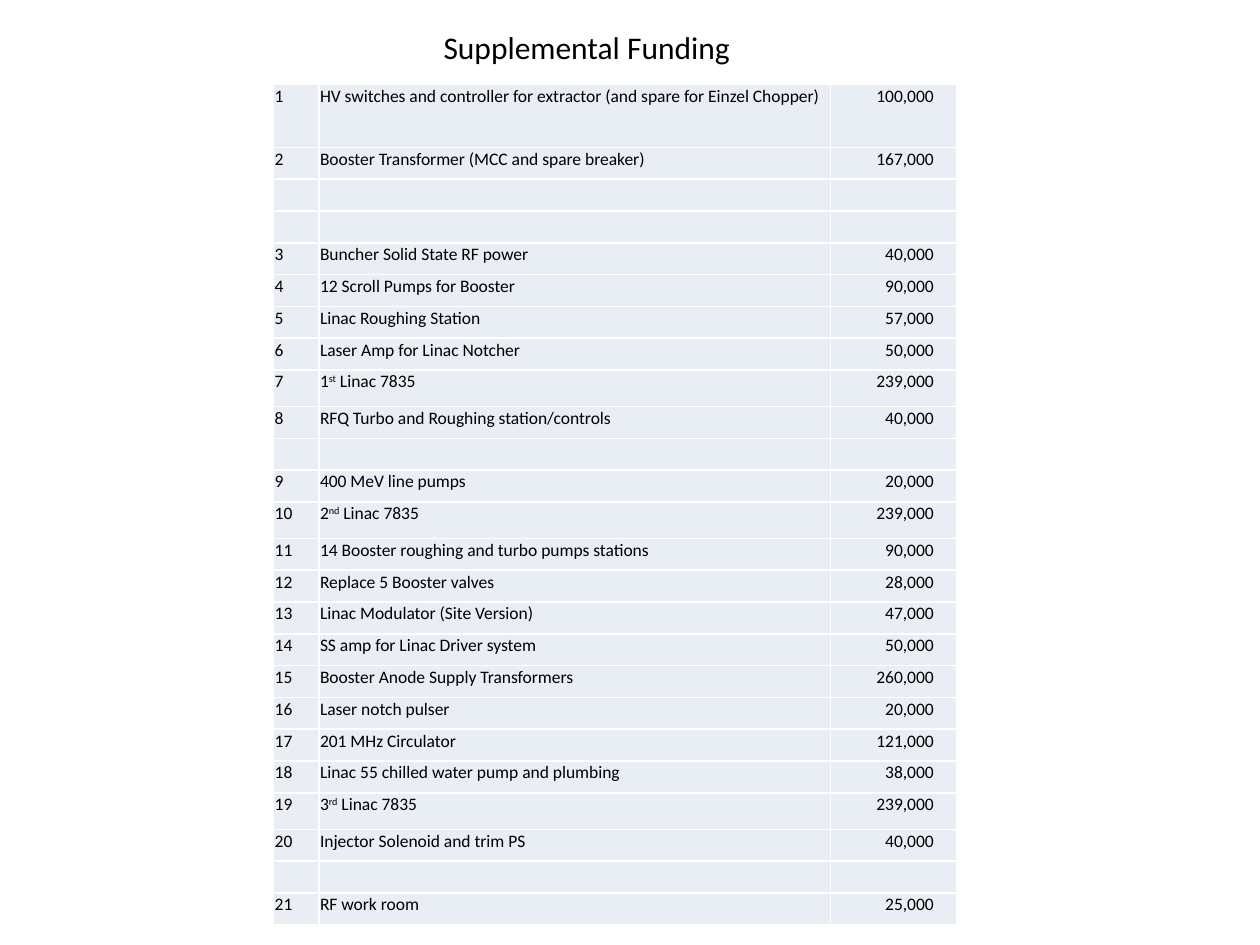
import itertools
from dataclasses import dataclass

import pptx
import pptx.dml.color
import pptx.enum.text
import pptx.util

Inches = pptx.util.Inches
ALIGN = pptx.enum.text.PP_ALIGN
ANCHOR = pptx.enum.text.MSO_ANCHOR


@dataclass
class Theme:
    font: str = "Calibri"
    ink: str = "000000"
    band: str = "E9EDF4"
    head: int = 18
    body: int = 10


ITEMS = [
    ("HV switches and controller for extractor (and spare for Einzel Chopper)", 100000),
    ("Booster Transformer (MCC and spare breaker)", 167000),
    None,
    None,
    ("Buncher Solid State RF power", 40000),
    ("12 Scroll Pumps for Booster", 90000),
    ("Linac Roughing Station", 57000),
    ("Laser Amp for Linac Notcher", 50000),
    ("1^st^ Linac 7835", 239000),
    ("RFQ Turbo and Roughing station/controls", 40000),
    None,
    ("400 MeV line pumps", 20000),
    ("2^nd^ Linac 7835", 239000),
    ("14 Booster roughing and turbo pumps stations", 90000),
    ("Replace 5 Booster valves", 28000),
    ("Linac Modulator (Site Version)", 47000),
    ("SS amp for Linac Driver system", 50000),
    ("Booster Anode Supply Transformers", 260000),
    ("Laser notch pulser", 20000),
    ("201 MHz Circulator", 121000),
    ("Linac 55 chilled water pump and plumbing", 38000),
    ("3^rd^ Linac 7835", 239000),
    ("Injector Solenoid and trim PS", 40000),
    None,
    ("RF work room", 25000),
]
WIDTHS = [0.36, 4.06, 1]
TOTAL = 6.67
FIRST = 0.5
RAISED = 0.29


def heights():
    tall = {0: FIRST}
    for i, item in enumerate(ITEMS):
        if item and "^" in item[0]:
            tall[i] = RAISED
    rest = (TOTAL - sum(tall.values())) / (len(ITEMS) - len(tall))
    return [tall.get(i, rest) for i in range(len(ITEMS))]


class Deck:
    def __init__(self, theme):
        self.theme = theme
        self.file = pptx.Presentation()
        self.file.slide_width = Inches(10)
        self.file.slide_height = Inches(7.5)
        self.slide = self.file.slides.add_slide(self.file.slide_layouts[5])

    def color(self, code):
        return pptx.dml.color.RGBColor.from_string(code)

    def style(self, para, size, align):
        para.alignment = align
        para.font.name = self.theme.font
        para.font.size = pptx.util.Pt(size)
        para.font.color.rgb = self.color(self.theme.ink)

    def title(self, text, left, top, width, height):
        shape = self.slide.shapes.title
        shape.left, shape.top = Inches(left), Inches(top)
        shape.width, shape.height = Inches(width), Inches(height)
        frame = shape.text_frame
        frame.text = text
        frame.word_wrap = False
        frame.auto_size = pptx.enum.text.MSO_AUTO_SIZE.NONE
        frame.vertical_anchor = ANCHOR.TOP
        self.style(frame.paragraphs[0], self.theme.head, ALIGN.LEFT)

    def cell(self, cell, text, align=ALIGN.LEFT, right=0.01):
        cell.fill.solid()
        cell.fill.fore_color.rgb = self.color(self.theme.band)
        cell.margin_left = cell.margin_top = Inches(0.01)
        cell.margin_right, cell.margin_bottom = Inches(right), 0
        para = cell.text_frame.paragraphs[0]
        self.style(para, self.theme.body, align)
        if not text:
            para._p.get_or_add_endParaRPr().set("sz", str(self.theme.body * 100))
            return
        for i, part in enumerate(text.split("^")):
            run = para.add_run()
            run.text = part
            if i % 2:
                run._r.get_or_add_rPr().set("baseline", "30000")

    def table(self, items, left, top):
        frame = self.slide.shapes.add_table(
            len(items), len(WIDTHS), Inches(left), Inches(top),
            Inches(sum(WIDTHS)), Inches(TOTAL))
        table = frame.table
        table.first_row = table.horz_banding = False
        for col, width in zip(table.columns, WIDTHS):
            col.width = Inches(width)
        count = itertools.count(1)
        for row, item, height in zip(table.rows, items, heights()):
            row.height = Inches(height)
            texts = (str(next(count)), item[0], f"{item[1]:,}") if item else ("", "", "")
            number, name, cost = row.cells
            self.cell(number, texts[0])
            self.cell(name, texts[1])
            self.cell(cost, texts[2], ALIGN.RIGHT, 0.18)


def main():
    deck = Deck(Theme())
    deck.title("Supplemental Funding", 3.42, 0.17, 2.5, 0.4)
    deck.table(ITEMS, 2.17, 0.67)
    deck.file.save("out.pptx")


if __name__ == "__main__":
    main()
